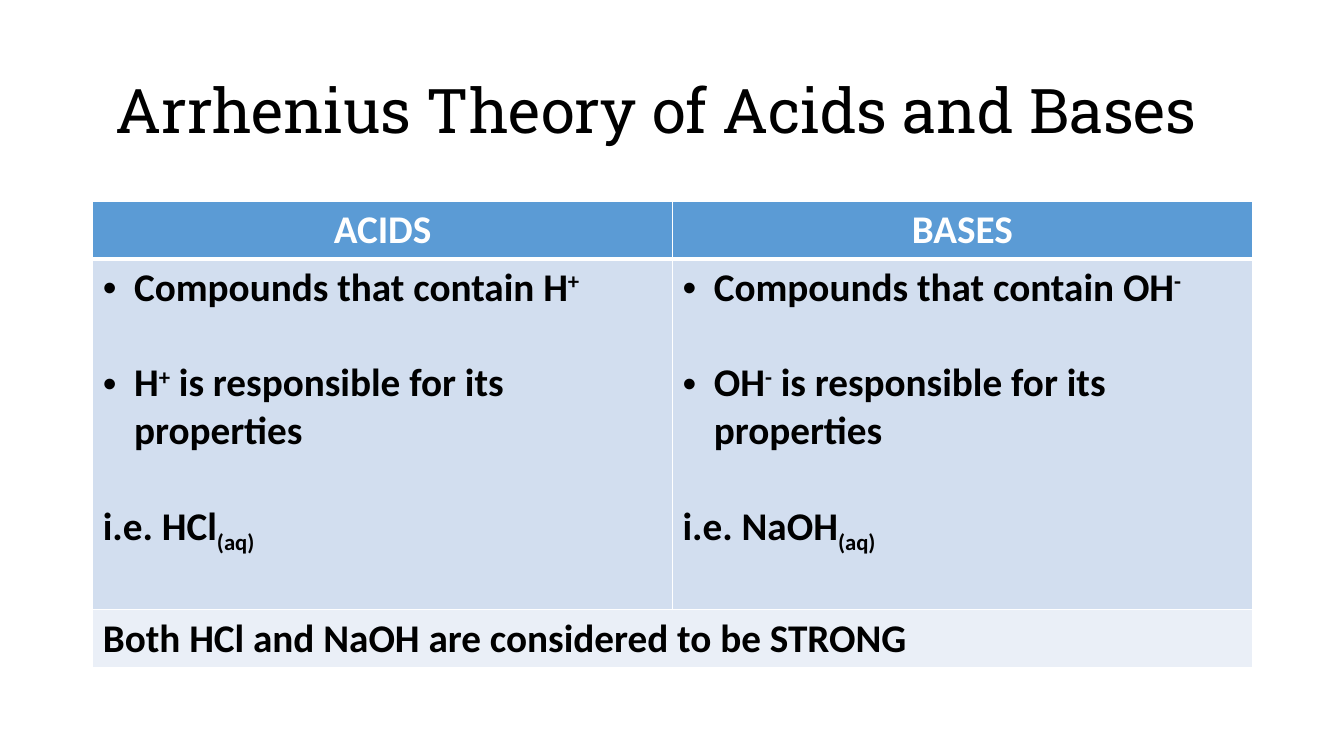
import pptx
import pptx.util
import pptx.dml.color
import pptx.enum.text
import pptx.oxml
import pptx.oxml.ns
from lxml import etree

Inches = pptx.util.Inches
Pt = pptx.util.Pt
ALIGN = pptx.enum.text.PP_ALIGN
COLORS = {
    "header": "5B9BD5",
    "body": "D2DEEF",
    "summary": "EAEFF7",
    "black": "000000",
    "white": "FFFFFF",
}
SUPERSCRIPT, SUBSCRIPT = 30000, -25000
LINE_GAP = 34


def color(name):
    return pptx.dml.color.RGBColor.from_string(COLORS[name])


def add_child(parent, tag, **attributes):
    child = etree.SubElement(parent, pptx.oxml.ns.qn(tag))
    for name, value in attributes.items():
        child.set(name, str(value))
    return child


def write_text(paragraph, text, size=28, font="Calibri", ink="black", bold=True,
               align=ALIGN.LEFT, baseline=0):
    paragraph.alignment = align
    run = paragraph.add_run()
    run.text = text
    run.font.size = Pt(size)
    run.font.name = font
    run.font.bold = bold
    run.font.color.rgb = color(ink)
    if baseline:
        run.font._element.set("baseline", str(baseline))


def add_bullet(paragraph):
    properties = paragraph._p.get_or_add_pPr()
    properties.set("marL", str(Inches(0.31)))
    properties.set("indent", str(-Inches(0.31)))
    add_child(properties, "a:buFont", typeface="Arial")
    add_child(properties, "a:buChar", char="•")


def style_cell(cell, fill, bottom=1):
    properties = cell._tc.get_or_add_tcPr()
    widths = {"a:lnL": 1, "a:lnR": 1, "a:lnT": 1, "a:lnB": bottom}
    for tag, width in widths.items():
        line = add_child(properties, tag, w=Pt(width))
        add_child(add_child(line, "a:solidFill"), "a:srgbClr", val=COLORS["white"])
    cell.fill.solid()
    cell.fill.fore_color.rgb = color(fill)


def fill_definition(cell, ion, charge, example):
    lines = [
        (True, [("Compounds that contain " + ion, 0), (charge, SUPERSCRIPT)]),
        (True, [(ion, 0), (charge, SUPERSCRIPT), (" is responsible for its properties", 0)]),
        (False, [("i.e. " + example, 0), ("(aq)", SUBSCRIPT)]),
    ]
    for index, (bulleted, pieces) in enumerate(lines):
        if index:
            paragraph = cell.text_frame.add_paragraph()
            paragraph.space_before = Pt(LINE_GAP)
        else:
            paragraph = cell.text_frame.paragraphs[0]
        if bulleted:
            add_bullet(paragraph)
        for text, baseline in pieces:
            write_text(paragraph, text, baseline=baseline)


def add_title(slide, left, top, width, height):
    shape = slide.shapes.add_textbox(Inches(left), Inches(top), Inches(width), Inches(height))
    frame = shape.text_frame
    frame.word_wrap = True
    frame.vertical_anchor = pptx.enum.text.MSO_ANCHOR.MIDDLE
    paragraph = frame.paragraphs[0]
    paragraph.line_spacing = 0.9
    write_text(paragraph, "Arrhenius Theory of Acids and Bases", size=44,
               font="Roboto Slab", bold=False, align=ALIGN.CENTER)


def add_comparison(slide, left, top, width, height):
    columns = [("ACIDS", "H", "+", "HCl"), ("BASES", "OH", "-", "NaOH")]
    edge_row = 0.57
    row_heights = [edge_row, height - 2 * edge_row, edge_row]
    table = slide.shapes.add_table(
        len(row_heights), len(columns),
        Inches(left), Inches(top), Inches(width), Inches(height)).table
    for row, row_height in zip(table.rows, row_heights):
        row.height = Inches(row_height)
    for index, (heading, ion, charge, example) in enumerate(columns):
        table.columns[index].width = Inches(width / len(columns))
        header, definition, summary = (table.cell(row, index) for row in range(3))
        style_cell(header, "header", bottom=3)
        write_text(header.text_frame.paragraphs[0], heading, ink="white", align=ALIGN.CENTER)
        style_cell(definition, "body")
        fill_definition(definition, ion, charge, example)
        style_cell(summary, "summary")
    conclusion = table.cell(2, 0)
    conclusion.merge(table.cell(2, len(columns) - 1))
    write_text(conclusion.text_frame.paragraphs[0],
               "Both HCl and NaOH are considered to be STRONG")


def main():
    presentation = pptx.Presentation()
    presentation.slide_width = Inches(13.33)
    presentation.slide_height = Inches(7.5)
    slide = presentation.slides.add_slide(presentation.slide_layouts[6])
    add_title(slide, 0.61, 0.4, 11.81, 1.45)
    add_comparison(slide, 0.92, 2, 11.5, 4.62)
    presentation.save("out.pptx")


if __name__ == "__main__":
    main()
